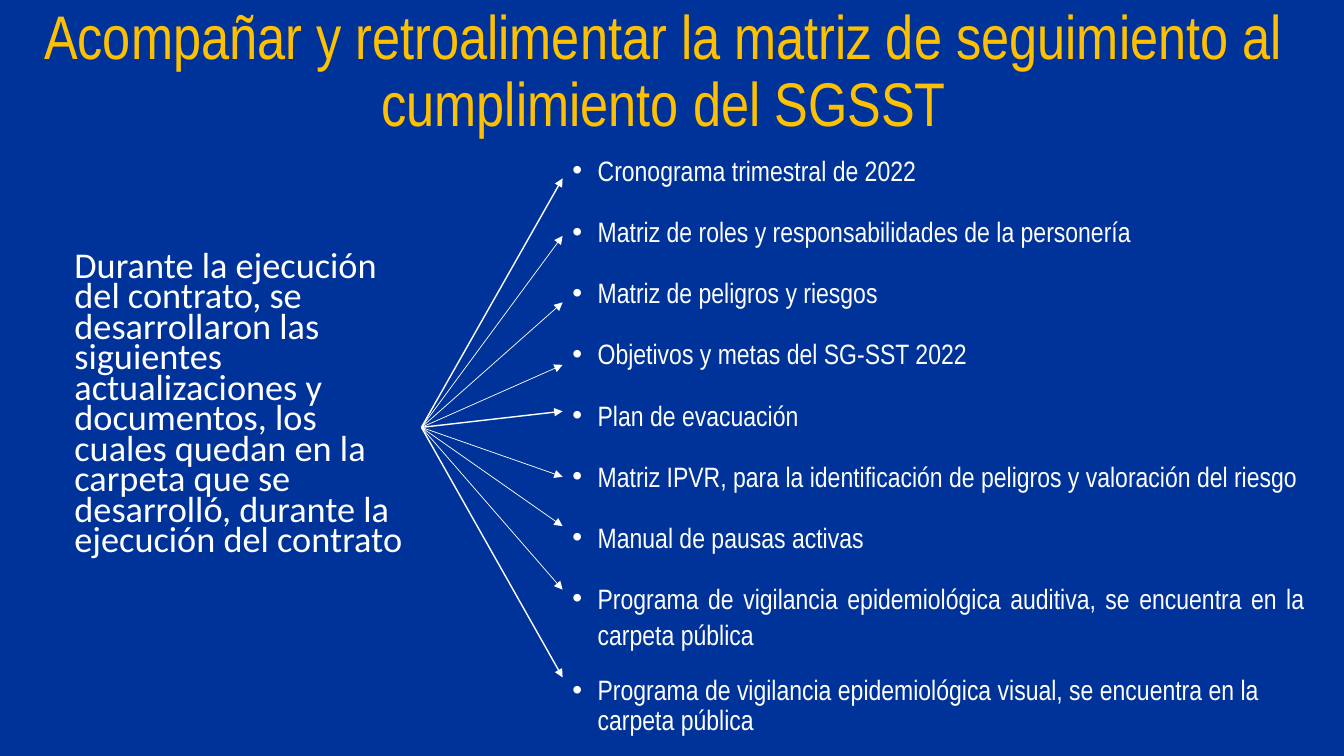
from dataclasses import dataclass
from typing import Any

from lxml.etree import SubElement
from pptx import Presentation
from pptx.dml.color import RGBColor
from pptx.enum.shapes import MSO_CONNECTOR as Connector
from pptx.enum.text import MSO_ANCHOR as Anchor, PP_ALIGN as Align
from pptx.oxml.ns import qn
from pptx.util import Inches, Pt

COLORS = {"background": "003399", "title": "FFC000", "text": "FFFFFF"}
RIGHT_SIDE = 3


@dataclass(frozen=True)
class Block:
    left: float
    top: float
    width: float
    height: float
    font: str
    size: float
    color: str
    anchor: Any = Anchor.TOP


@dataclass(frozen=True)
class Document:
    text: str
    arrow_y: float
    arrow_width: float = 0.5
    justified: bool = True
    line_spacing: float = 1.07
    space_after: float = 8


TITLE = Block(0.13, 0, 12.91, 1.45, "Arial Narrow", 44, "title", Anchor.MIDDLE)
INTRO = Block(0.64, 2.47, 3.54, 3.54, "Calibri", 25.9, "text")
LIST = Block(5.58, 1.45, 7.46, 5.58, "Arial Narrow", 20, "text")

TITLE_TEXT = "Acompañar y retroalimentar la matriz de seguimiento al cumplimiento del SGSST"
INTRO_TEXT = (
    "Durante la ejecución del contrato, se desarrollaron las siguientes "
    "actualizaciones y documentos, los cuales quedan en la carpeta que se "
    "desarrolló, durante la ejecución del contrato"
)
DOCUMENTS = [
    Document("Cronograma trimestral de 2022", 1.77, arrow_width=1),
    Document("Matriz de roles y responsabilidades de la personería", 2.34),
    Document("Matriz de peligros y riesgos", 3),
    Document("Objetivos y metas del SG-SST 2022", 3.62),
    Document("Plan de evacuación", 4.08, arrow_width=1, justified=False),
    Document("Matriz IPVR, para la identificación de peligros y valoración del riesgo",
             4.73, justified=False),
    Document("Manual de pausas activas", 5.22),
    Document("Programa de vigilancia epidemiológica auditiva, se encuentra en la carpeta pública",
             5.85),
    Document("Programa de vigilancia epidemiológica visual, se encuentra en la carpeta pública",
             6.72, arrow_width=1, justified=False, line_spacing=0.9, space_after=0),
]


def rgb(name: str) -> RGBColor:
    return RGBColor.from_string(COLORS[name])


def add_block(slide: Any, block: Block) -> Any:
    box = slide.shapes.add_textbox(Inches(block.left), Inches(block.top),
                                   Inches(block.width), Inches(block.height))
    box.text_frame.word_wrap = True
    box.text_frame.vertical_anchor = block.anchor
    return box


def write(paragraph: Any, text: str, block: Block, layout: dict[str, Any]) -> None:
    for attribute, value in layout.items():
        setattr(paragraph, attribute, value)
    run = paragraph.add_run()
    run.text = text
    for attribute, value in {"name": block.font, "size": Pt(block.size)}.items():
        setattr(run.font, attribute, value)
    run.font.color.rgb = rgb(block.color)


def add_bullet(paragraph: Any) -> None:
    properties = paragraph._p.get_or_add_pPr()
    properties.set("marL", str(Inches(0.25)))
    properties.set("indent", str(-Inches(0.25)))
    SubElement(properties, qn("a:buFont")).set("typeface", "Arial")
    SubElement(properties, qn("a:buChar")).set("char", "•")


def add_arrow(slide: Any, intro: Any, document: Document) -> None:
    arrow = slide.shapes.add_connector(
        Connector.STRAIGHT, Inches(INTRO.left + INTRO.width),
        Inches(INTRO.top + INTRO.height / 2), Inches(LIST.left), Inches(document.arrow_y))
    arrow.begin_connect(intro, RIGHT_SIDE)
    arrow.line.color.rgb = rgb("text")
    arrow.line.width = Pt(document.arrow_width)
    SubElement(arrow.line._get_or_add_ln(), qn("a:tailEnd")).set("type", "triangle")
    SubElement(arrow._element.spPr, qn("a:effectLst"))


def main() -> None:
    deck = Presentation()
    deck.slide_width, deck.slide_height = Inches(13.33), Inches(7.5)
    slide = deck.slides.add_slide(deck.slide_layouts[6])
    slide.background.fill.solid()
    slide.background.fill.fore_color.rgb = rgb("background")

    # Title
    title = add_block(slide, TITLE)
    write(title.text_frame.paragraphs[0], TITLE_TEXT, TITLE,
          {"alignment": Align.CENTER, "line_spacing": 0.9})

    # Introduction on the left
    intro = add_block(slide, INTRO)
    write(intro.text_frame.paragraphs[0], INTRO_TEXT, INTRO,
          {"line_spacing": 0.7, "space_before": Pt(10)})

    # Documents on the right, each with its arrow
    listing = add_block(slide, LIST).text_frame
    for index, document in enumerate(DOCUMENTS):
        entry = listing.add_paragraph() if index else listing.paragraphs[0]
        write(entry, document.text, LIST, {
            "alignment": Align.JUSTIFY if document.justified else Align.LEFT,
            "line_spacing": document.line_spacing,
            "space_before": Pt(10),
            "space_after": Pt(document.space_after),
        })
        add_bullet(entry)
        add_arrow(slide, intro, document)

    deck.save("out.pptx")


if __name__ == "__main__":
    main()
